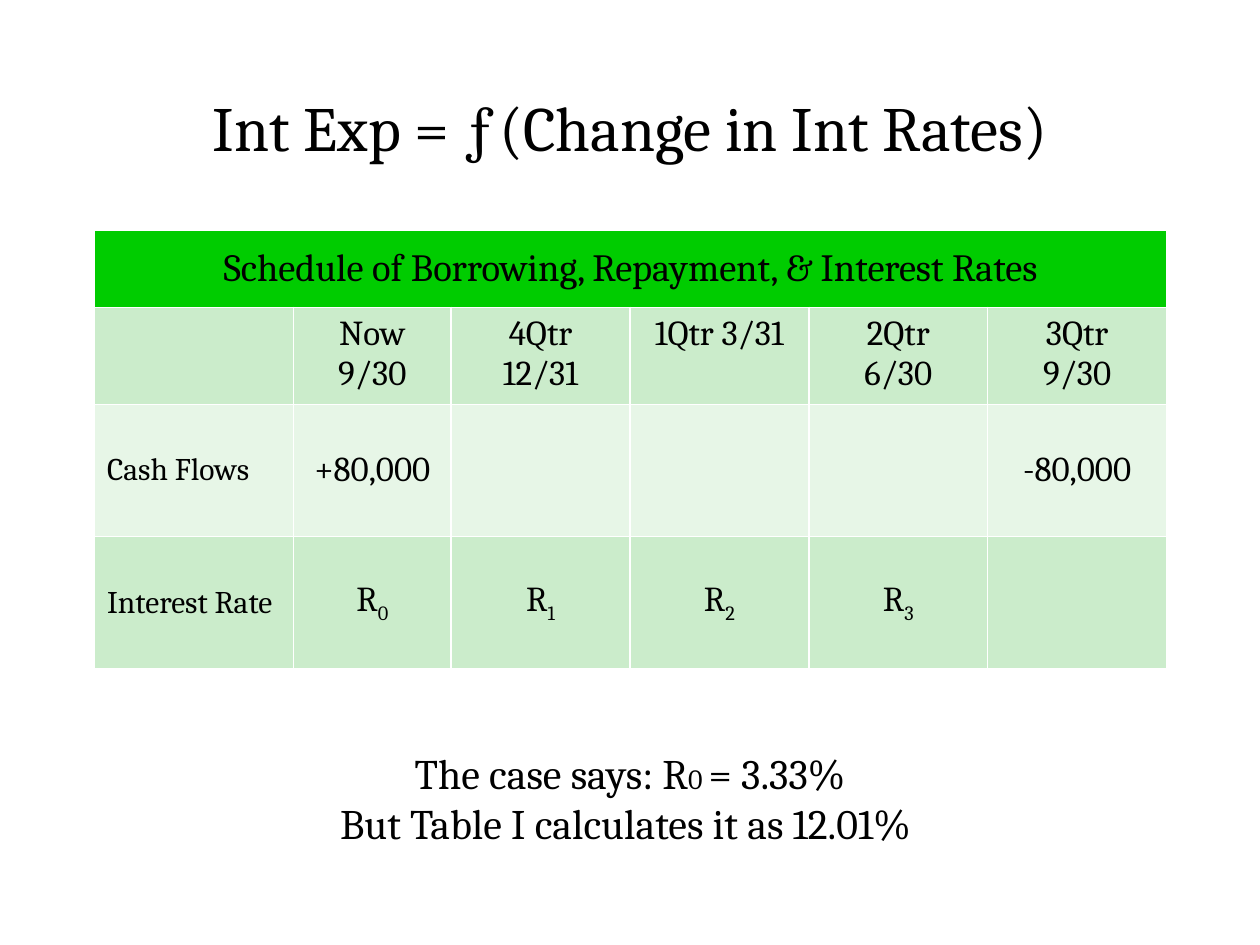
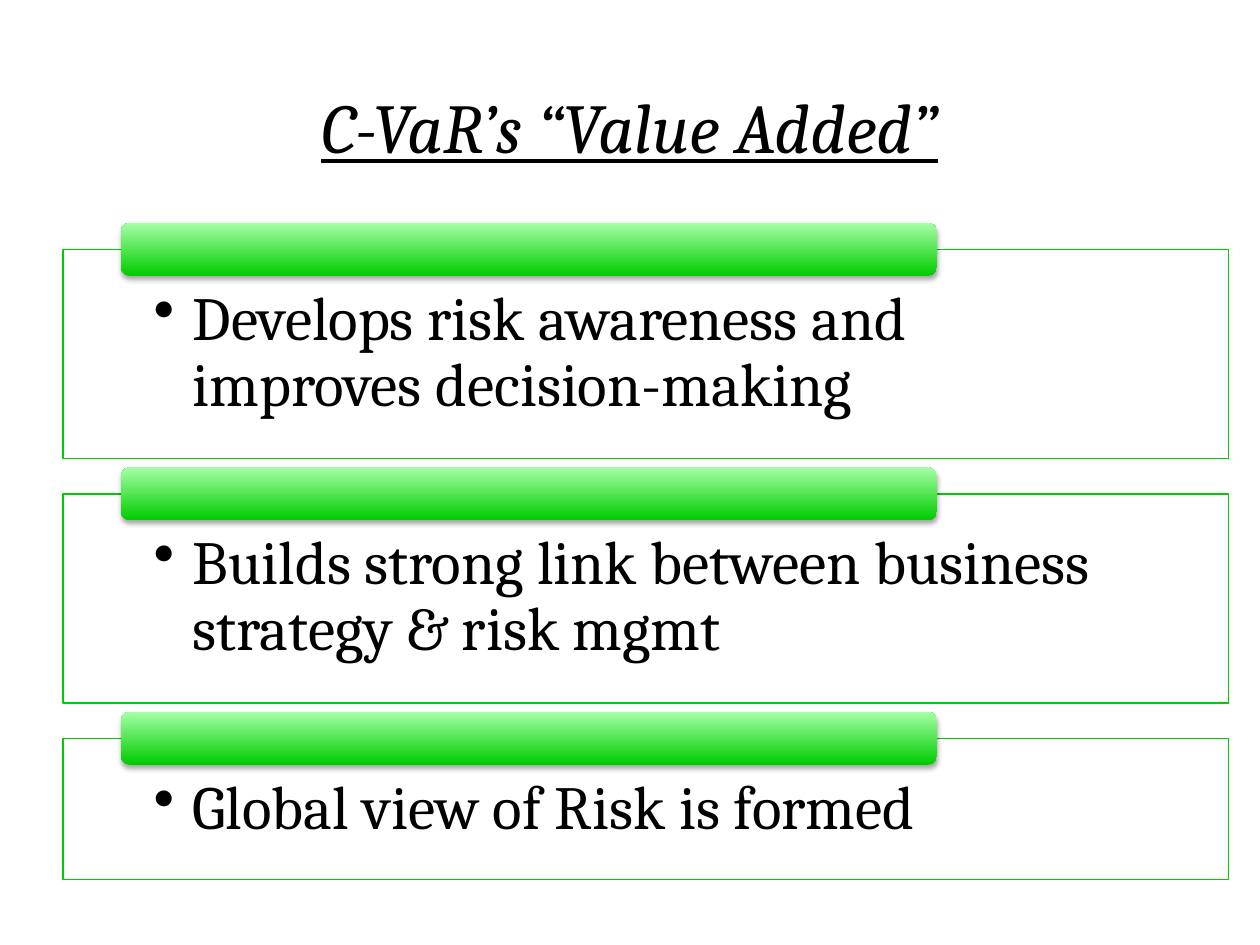
from dataclasses import dataclass

from lxml.etree import SubElement
from pptx import Presentation
from pptx.dml.color import RGBColor
from pptx.enum.shapes import MSO_SHAPE
from pptx.enum.text import MSO_ANCHOR, PP_ALIGN
from pptx.oxml.ns import qn
from pptx.util import Inches, Pt


@dataclass(frozen=True)
class Theme:
    font: str = "Cambria"
    ink: str = "000000"
    paper: str = "FFFFFF"
    green: str = "00CC00"
    light_green: str = "A5FFA5"
    dark_band: str = "CBECCB"
    light_band: str = "E7F6E7"
    formula_title: int = 36
    value_title: int = 40
    benefit: int = 35
    note: int = 24
    note_subscript: int = 16
    table_title: int = 22
    cell: int = 20
    row_label: int = 18


THEME = Theme()
TITLE_BOX = (0.75, 0.5, 8.5, 1)
TABLE_BOX = (0.75, 1.83, 8.5, 3.49)
NOTE_BOX = (0.75, 5.83, 8.5, 1)

COLUMN_WIDTHS = [1.58, 1.25] + [1.42] * 4
ROW_HEIGHTS = [0.61, 0.77, 1.05, 1.05]
SCHEDULE_TITLE = "Schedule of Borrowing, Repayment, & Interest Rates"
QUARTERS = ["", "Now\n9/30", "4Qtr\n12/31", "1Qtr 3/31", "2Qtr\n6/30", "3Qtr\n9/30"]
CASH_FLOWS = ["Cash Flows", "+80,000", "", "", "", "-80,000"]

BENEFITS = [
    ("Develops risk awareness and improves decision-making", 1.66),
    ("Builds strong link between business strategy & risk mgmt", 1.66),
    ("Global view of Risk is formed", 1.12),
]


def color(value):
    return RGBColor.from_string(value)


def inches(box):
    return [Inches(length) for length in box]


def write_text(frame, paragraphs, size, align=PP_ALIGN.CENTER, anchor=MSO_ANCHOR.MIDDLE,
               italic=False, underline=False):
    if isinstance(paragraphs, str):
        paragraphs = [[(line, {})] for line in paragraphs.split("\n")]
    frame.word_wrap = True
    frame.vertical_anchor = anchor
    for index, runs in enumerate(paragraphs):
        paragraph = frame.paragraphs[0] if index == 0 else frame.add_paragraph()
        paragraph.alignment = align
        for text, changes in runs:
            run = paragraph.add_run()
            run.text = text
            font = run.font
            font.name = THEME.font
            font.size = Pt(changes.get("size", size))
            font.color.rgb = color(THEME.ink)
            font.bold = False
            font.italic = italic
            font.underline = underline
            if "baseline" in changes:
                font._element.set("baseline", str(changes["baseline"] * 1000))


def add_titled_slide(presentation, text, **text_format):
    slide = presentation.slides.add_slide(presentation.slide_layouts[5])
    title = slide.shapes.title
    title.left, title.top, title.width, title.height = inches(TITLE_BOX)
    write_text(title.text_frame, text, **text_format)
    return slide


def add_schedule(slide, box):
    rates = [[("R", {}), (str(quarter), {"baseline": -25})] for quarter in range(4)]
    rows = [
        [SCHEDULE_TITLE],
        QUARTERS,
        CASH_FLOWS,
        ["Interest Rate"] + [[rate] for rate in rates] + [""],
    ]
    fills = [THEME.green, THEME.dark_band, THEME.light_band, THEME.dark_band]
    table = slide.shapes.add_table(len(rows), len(COLUMN_WIDTHS), *inches(box)).table
    for column, width in zip(table.columns, COLUMN_WIDTHS):
        column.width = Inches(width)
    for row, height in zip(table.rows, ROW_HEIGHTS):
        row.height = Inches(height)
    table.cell(0, 0).merge(table.cell(0, len(COLUMN_WIDTHS) - 1))

    for row_index, (contents, fill) in enumerate(zip(rows, fills)):
        for cell in table.rows[row_index].cells:
            cell.fill.solid()
            cell.fill.fore_color.rgb = color(fill)
        for column_index, content in enumerate(contents):
            if not content:
                continue
            cell = table.cell(row_index, column_index)
            is_label = row_index > 0 and column_index == 0
            size = THEME.table_title if row_index == 0 else THEME.cell
            write_text(
                cell.text_frame, content,
                size=THEME.row_label if is_label else size,
                align=PP_ALIGN.LEFT if is_label else PP_ALIGN.CENTER,
            )
            cell.vertical_anchor = MSO_ANCHOR.TOP if row_index == 1 else MSO_ANCHOR.MIDDLE


def add_note(slide, box):
    note = slide.shapes.add_textbox(*inches(box))
    write_text(note.text_frame, [
        [("The case says: R", {}), ("0 ", {"size": THEME.note_subscript}), ("= 3.33%", {})],
        [("But Table I calculates it as 12.01% ", {})],
    ], size=THEME.note)


def add_bullet(paragraph, indent):
    properties = paragraph._p.get_or_add_pPr()
    properties.set("marL", str(Inches(indent)))
    properties.set("indent", str(-Inches(indent)))
    SubElement(properties, qn("a:buChar"), char="•")


def add_soft_shadow(shape):
    shape.shadow.inherit = False
    effects = shape._element.spPr.find(qn("a:effectLst"))
    shadow = SubElement(effects, qn("a:outerShdw"), blurRad=str(Pt(3.1)), dist=str(Pt(1.8)),
                        dir="5400000", rotWithShape="0")
    shade = SubElement(shadow, qn("a:srgbClr"), val=THEME.ink)
    SubElement(shade, qn("a:alpha"), val="35000")


def add_benefit(slide, text, box):
    left, top, width, height = box
    panel = slide.shapes.add_shape(MSO_SHAPE.RECTANGLE, *inches(box))
    panel.shadow.inherit = False
    panel.fill.solid()
    panel.fill.fore_color.rgb = color(THEME.paper)
    panel.line.color.rgb = color(THEME.green)
    panel.line.width = Pt(0.75)
    frame = panel.text_frame
    frame.margin_left = frame.margin_right = Inches(0.72)
    frame.margin_top, frame.margin_bottom = Inches(0.3), Inches(0.27)
    write_text(frame, text, size=THEME.benefit, align=PP_ALIGN.LEFT, anchor=MSO_ANCHOR.TOP)
    paragraph = frame.paragraphs[0]
    paragraph.line_spacing = 0.9
    add_bullet(paragraph, 0.31)

    tab_box = (left + 0.46, top - 0.21, width * 0.7, 0.42)
    tab = slide.shapes.add_shape(MSO_SHAPE.ROUNDED_RECTANGLE, *inches(tab_box))
    tab.fill.gradient()
    tab.fill.gradient_angle = 90
    for stop, shade in zip(tab.fill.gradient_stops, (THEME.green, THEME.light_green)):
        stop.color.rgb = color(shade)
    for stop, position in zip(tab.fill.gradient_stops, (0, 1)):
        stop.position = position
    tab.line.fill.background()
    add_soft_shadow(tab)


def build_rates_slide(presentation):
    slide = add_titled_slide(presentation, "Int Exp = ƒ(Change in Int Rates)",
                             size=THEME.formula_title)
    add_schedule(slide, TABLE_BOX)
    add_note(slide, NOTE_BOX)


def build_value_slide(presentation):
    slide = add_titled_slide(presentation, "C-VaR’s “Value Added”",
                             size=THEME.value_title, italic=True, underline=True)
    top, gap = 1.98, 0.28
    for text, height in BENEFITS:
        add_benefit(slide, text, (0.5, top, 9.25, height))
        top += height + gap


def main():
    presentation = Presentation()
    presentation.slide_width, presentation.slide_height = Inches(10), Inches(7.5)
    build_rates_slide(presentation)
    build_value_slide(presentation)
    presentation.save("out.pptx")


if __name__ == "__main__":
    main()
